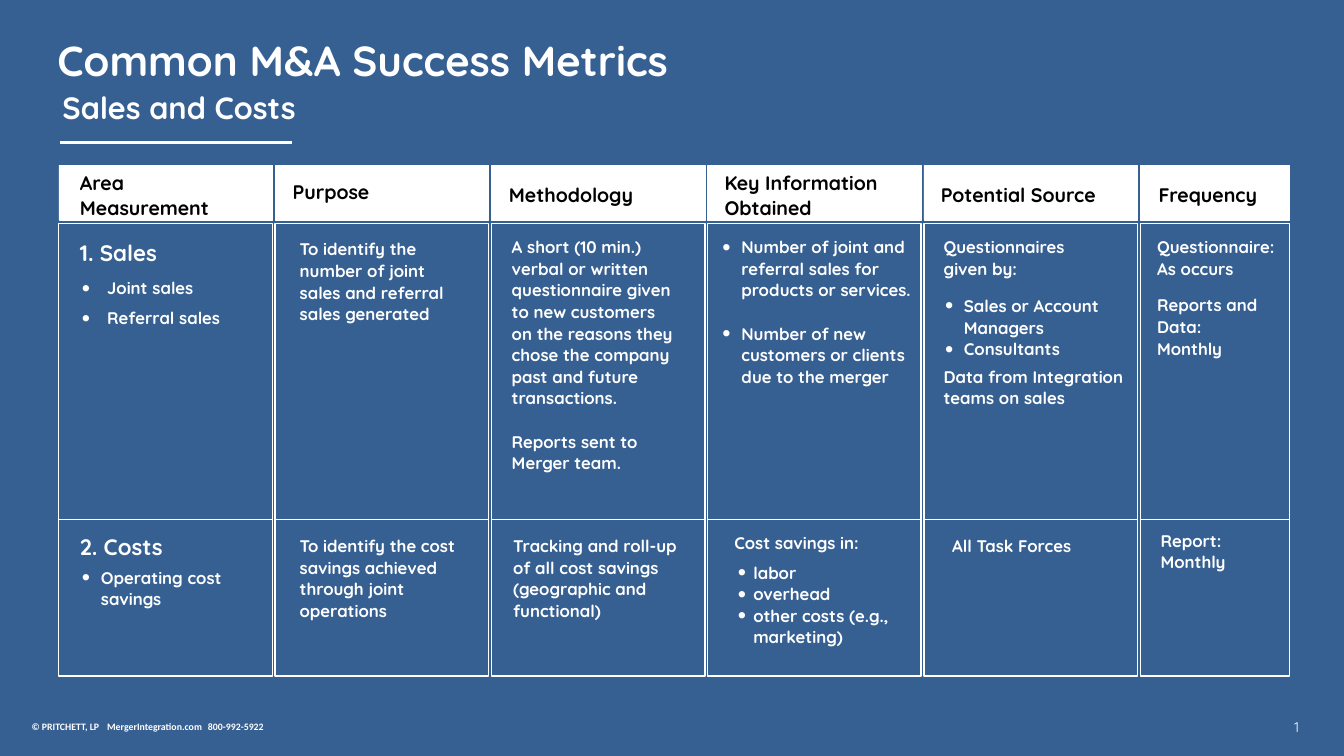
from lxml import etree
from pptx import Presentation
from pptx import util as u
from pptx.dml.color import RGBColor
from pptx.enum import shapes, text
from pptx.oxml import ns

EMU_PER_PX = 12700  # 72 px to the inch
BLUE = RGBColor(0x37, 0x60, 0x92)
WHITE = RGBColor(0xFF, 0xFF, 0xFF)
BLACK = RGBColor(0, 0, 0)

# Grid
GRID_LEFT, PITCH = 84, 309
COLUMN_WIDTHS = [305] * 5 + [213]
HEADER_ROW = (236, 78)
BODY_ROWS = [(319, 423), (742, 224)]

# Left, top, width, height, lines
HEADERS = [
    (107, 238, 284, 77, ["Area", "Measurement"]),
    (411, 251, 194, 40, ["Purpose"]),
    (720, 255, 215, 40, ["Methodology"]),
    (1028, 238, 264, 77, ["Key Information Obtained"]),
    (1337, 255, 264, 40, ["Potential Source"]),
    (1648, 255, 180, 40, ["Frequency"]),
]
AREAS = [
    (107, 336, 166, 45, ["1. Sales"]),
    (107, 755, 184, 45, ["2. Costs"]),
]
# Left, top, width, height, lines, left margin, first-line indent, gap
NOTES = [
    (417, 336, 242, 130,
     ["To identify the number of joint sales and referral sales generated"], 4, 0, 0),
    (720, 333, 252, 347,
     ["A short (10 min.) verbal or written questionnaire given to new customers "
      "on the reasons they chose the company past and future transactions.",
      "Reports sent to Merger team."], 4, 0, 31),
    (1337, 333, 222, 67, ["Questionnaires given by:"], 4, 0, 0),
    (1337, 518, 292, 67, ["Data from Integration teams on sales"], 4, 0, 0),
    (1642, 333, 222, 68, ["Questionnaire:", "As occurs"], 4, 0, 0),
    (1642, 416, 222, 98, ["Reports and Data:", "Monthly"], 4, 0, 0),
    (417, 760, 242, 130,
     ["To identify the cost savings achieved through joint operations"], 4, 0, 0),
    (722, 760, 273, 130,
     ["Tracking and roll-up of all cost savings (geographic and functional)"], 4, 0, 0),
    (1024, 756, 273, 36, ["Cost savings in:"], 27, -9, 0),
    (1353, 760, 191, 36, ["All Task Forces"], 0, 0, 0),
    (1647, 752, 149, 67, ["Report:", "Monthly"], 4, 0, 0),
]
# As above, with line spacing in place of nothing at the end
BULLET_LISTS = [
    (110, 379, 242, 89, ["Joint sales", "Referral sales"], 36, -36, 0, 1.5),
    (1007, 333, 305, 222,
     ["Number of joint and referral sales for products or services.",
      "Number of new customers or clients due to the merger"], 45, -27, 31, 1.07),
    (1325, 417, 305, 98,
     ["Sales or Account Managers", "Consultants"], 45, -27, 0, 1.07),
    (110, 805, 242, 68, ["Operating cost savings"], 27, -27, 0, 1.07),
    (1028, 798, 264, 130,
     ["labor", "overhead", "other costs (e.g., marketing)"], 41, -22, 0, 1.07),
]


def px(length):
    return u.Emu(length * EMU_PER_PX)


def sub(parent, tag, **attributes):
    return etree.SubElement(parent, ns.qn(tag), attributes)


def add_bullet(paragraph):
    properties = paragraph._p.get_or_add_pPr()
    sub(sub(properties, "a:buClr"), "a:srgbClr", val=str(WHITE))
    sub(properties, "a:buSzPct", val="140000")
    sub(properties, "a:buFont", typeface="Arial")
    sub(properties, "a:buChar", char="•")


def add_tabs(paragraph, stops):
    tabs = sub(paragraph._p.get_or_add_pPr(), "a:tabLst")
    for stop in stops:
        sub(tabs, "a:tab", pos=str(px(stop)), algn="l")


def add_text(slide, left, top, width, height, lines, margin=0, indent=0, gap=0,
             spacing=1.07, size=24, color=WHITE, bold=True, font="Quicksand",
             bullets=False, tabs=()):
    """Add a text box with one paragraph per line, gap points apart."""
    box = slide.shapes.add_textbox(px(left), px(top), px(width), px(height))
    frame = box.text_frame
    frame.word_wrap = True
    frame.vertical_anchor = text.MSO_ANCHOR.TOP
    frame.text = "\n".join(lines)
    for index, paragraph in enumerate(frame.paragraphs):
        if bullets:
            add_bullet(paragraph)
        if tabs:
            add_tabs(paragraph, tabs)
        properties = paragraph._p.get_or_add_pPr()
        properties.set("marL", str(px(margin)))
        properties.set("indent", str(px(indent)))
        paragraph.line_spacing = spacing
        if index and gap:
            paragraph.space_before = u.Pt(gap)
        for run in paragraph.runs:
            run.font.name = font
            run.font.size = u.Pt(size)
            run.font.bold = bold
            run.font.color.rgb = color
    return frame


def add_cell(slide, left, top, width, height, line_width, fill=None):
    cell = slide.shapes.add_shape(shapes.MSO_SHAPE.RECTANGLE,
                                  px(left), px(top), px(width), px(height))
    cell.shadow.inherit = False
    if fill is None:
        cell.fill.background()
    else:
        cell.fill.solid()
        cell.fill.fore_color.rgb = fill
    cell.line.color.rgb = WHITE
    cell.line.width = u.Pt(line_width)


def add_grid(slide):
    for column, width in enumerate(COLUMN_WIDTHS):
        left = GRID_LEFT + column * PITCH
        add_cell(slide, left, HEADER_ROW[0], width, HEADER_ROW[1], 0.75, WHITE)
        for top, height in BODY_ROWS:
            add_cell(slide, left, top, width, height, 2)


def add_rule(slide, left, right, y):
    rule = slide.shapes.add_connector(shapes.MSO_CONNECTOR.STRAIGHT,
                                      px(left), px(y), px(right), px(y))
    rule.line.color.rgb = WHITE
    rule.line.width = u.Pt(4.5)
    sub(rule._element.spPr, "a:effectLst")


def add_heading(slide):
    title = add_text(slide, 82, 58, 1565, 66, ["Common M&A Success Metrics"],
                     spacing=0.9, size=60)
    title.margin_left = title.margin_right = 0
    title.margin_top = title.margin_bottom = 0
    add_text(slide, 82, 123, 542, 60, ["Sales and Costs"], spacing=1.0, size=44)
    add_rule(slide, 86, 417, 203)


def add_footer(slide):
    add_text(slide, 1842, 1026, 67, 29, ["1"], spacing=0.9, size=20, bold=False)
    add_text(slide, 38, 1026, 384, 24,
             ["© PRITCHETT, LP\tMergerIntegration.com\t800-992-5922"],
             spacing=1.0, size=14, font="Calibri", tabs=(115, 273))


def main():
    deck = Presentation()
    deck.slide_width, deck.slide_height = px(1920), px(1080)
    slide = deck.slides.add_slide(deck.slide_layouts[6])
    slide.background.fill.solid()
    slide.background.fill.fore_color.rgb = BLUE

    add_heading(slide)
    add_grid(slide)
    for header in HEADERS:
        add_text(slide, *header, size=28, color=BLACK)
    for area in AREAS:
        add_text(slide, *area, size=32)
    for note in NOTES:
        add_text(slide, *note)
    for bullet_list in BULLET_LISTS:
        add_text(slide, *bullet_list, bullets=True)
    add_footer(slide)
    deck.save("out.pptx")


if __name__ == "__main__":
    main()
